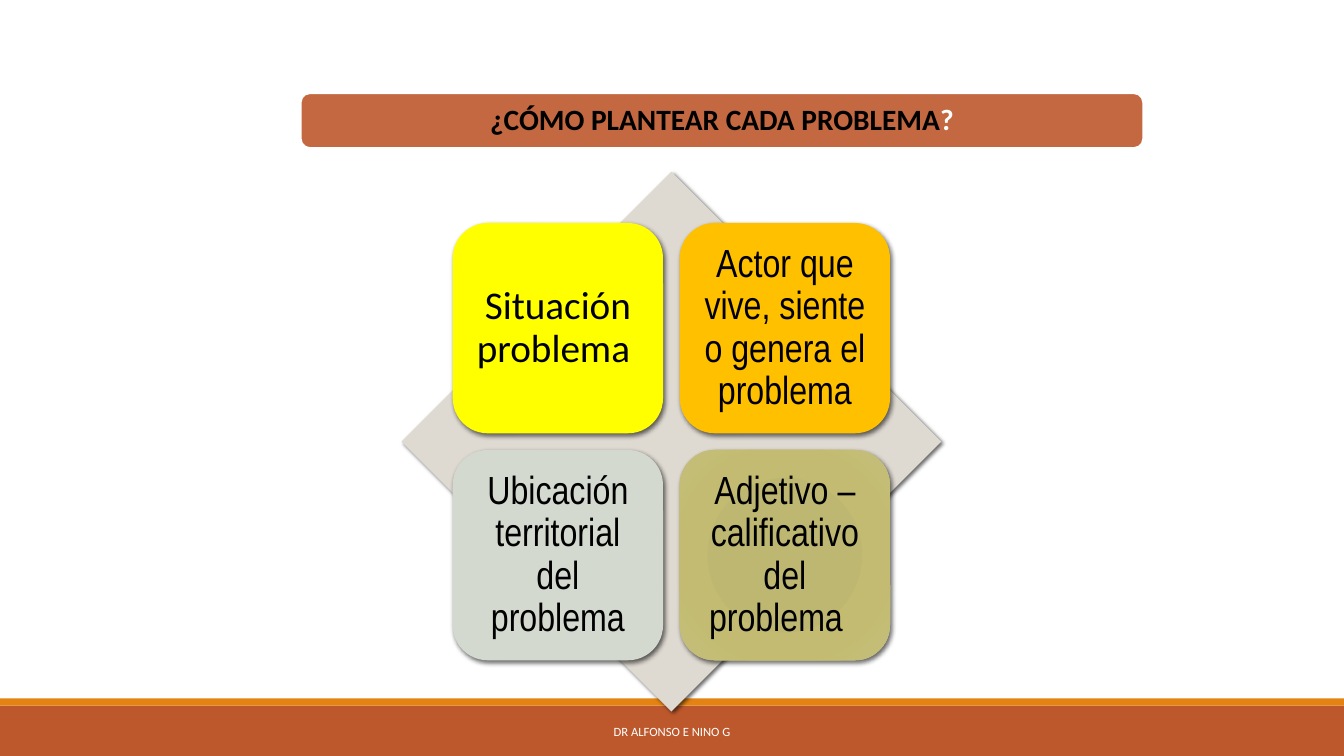
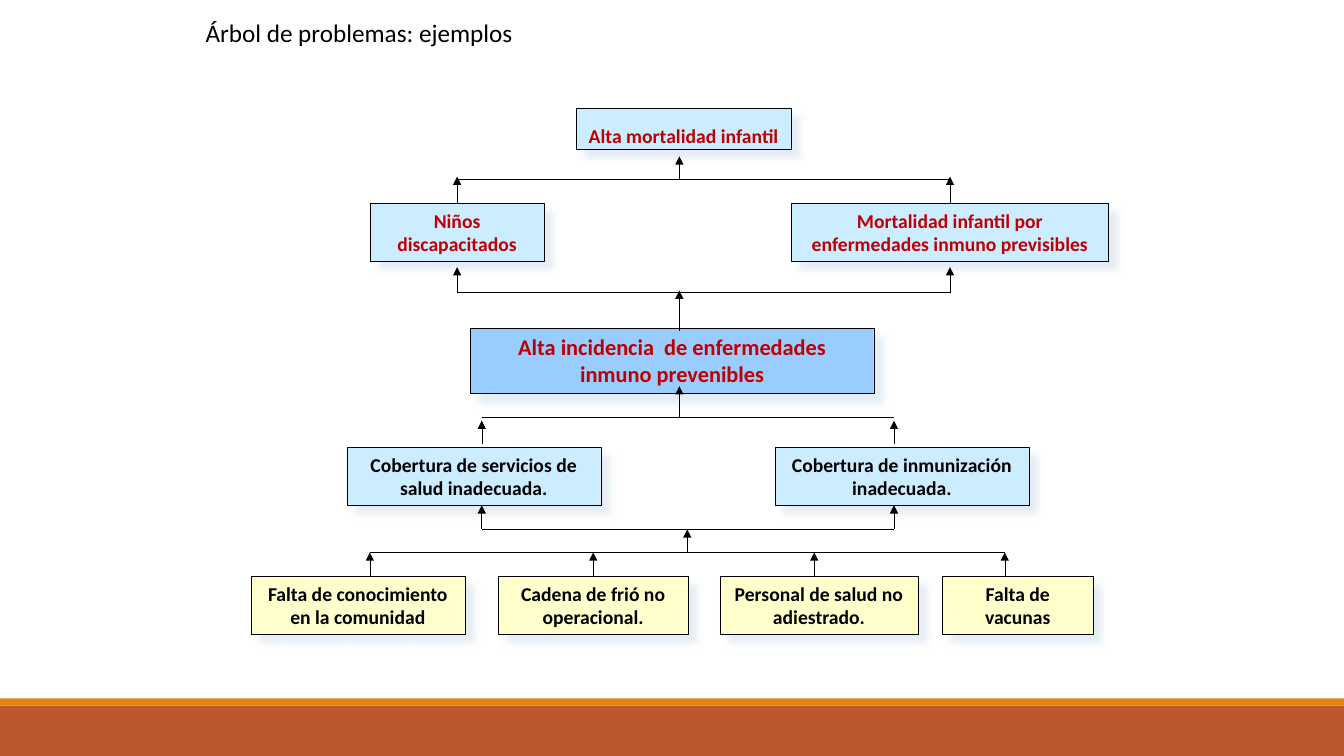
from dataclasses import dataclass
from typing import Optional

from pptx import Presentation
from pptx import oxml, util as u
from pptx.dml.color import RGBColor
from pptx.enum import shapes, text
from pptx.oxml import ns

# Shared look
WIDTH, HEIGHT = 33.87, 19.05
BLACK, WHITE, RED = "000000", "FFFFFF", "C00000"
RUST, ORANGE = "BD582C", "E48312"
PALE_BLUE, MID_BLUE, CREAM = "CCECFF", "99CCFF", "FFFFCC"
BODY_FONT, NARROW_FONT = "Calibri", "Arial Narrow"
RECTANGLE = shapes.MSO_SHAPE.RECTANGLE
ROUNDED = shapes.MSO_SHAPE.ROUNDED_RECTANGLE
MIDDLE, TOP = text.MSO_ANCHOR.MIDDLE, text.MSO_ANCHOR.TOP


@dataclass(frozen=True)
class Shadow:
    color: str
    opacity: int
    blur: float
    distance: float


@dataclass(frozen=True)
class Tile:
    words: str
    fill: Optional[str]
    font: str = NARROW_FONT


@dataclass(frozen=True)
class Box:
    words: str
    left: float
    top: float
    width: float
    height: float = 1.45
    fill: str = PALE_BLUE
    color: str = BLACK
    size: int = 14
    spacing: float = 1.0


@dataclass(frozen=True)
class Rail:
    left: float
    right: float
    y: float


@dataclass(frozen=True)
class ArrowRow:
    columns: tuple
    start: float
    end: float
    weight: float = 0.25


DIAMOND_SHADOW = Shadow(BLACK, 60, 3, 2)
TILE_SHADOW = Shadow(BLACK, 60, 3.5, 2)
BOX_SHADOW = Shadow("CCDDEA", 50, 5, 8.5)


# Drawing helpers
def rgb(color: str) -> RGBColor:
    return RGBColor.from_string(color)


def drawing_xml(markup: str):
    """Parse one DrawingML element given without its namespace."""
    name, rest = markup[1:].split(" ", 1)
    return oxml.parse_xml(f"<{name} {ns.nsdecls('a')} {rest}")


def add_shadow(shape, shadow: Shadow) -> None:
    effects = shape._element.spPr.find(ns.qn("a:effectLst"))
    effects.append(drawing_xml(
        f'<a:outerShdw blurRad="{u.Pt(shadow.blur)}" dist="{u.Pt(shadow.distance)}" '
        f'dir="2700000" algn="ctr" rotWithShape="0"><a:srgbClr val="{shadow.color}">'
        f'<a:alpha val="{shadow.opacity * 1000}"/></a:srgbClr></a:outerShdw>'))


def add_shape(slide, kind, left: float, top: float, width: float, height: float, *,
              fill: Optional[str] = None, line: Optional[str] = None, weight: float = 0.25,
              shadow: Optional[Shadow] = None):
    shape = slide.shapes.add_shape(kind, u.Cm(left), u.Cm(top), u.Cm(width), u.Cm(height))
    shape.shadow.inherit = False
    if fill:
        shape.fill.solid()
        shape.fill.fore_color.rgb = rgb(fill)
    if line:
        shape.line.color.rgb = rgb(line)
        shape.line.width = u.Pt(weight)
    else:
        shape.line.fill.background()
    if shadow:
        add_shadow(shape, shadow)
    return shape


def write(shape, words: str, *, size: float, color: str = BLACK, font: str = BODY_FONT,
          bold: bool = False, align=text.PP_ALIGN.CENTER, anchor=MIDDLE, spacing: float = 1.0,
          inset: Optional[float] = None, wrap: bool = True, ending: str = "") -> None:
    """Fill a shape with one paragraph; an ending follows in white."""
    frame = shape.text_frame
    frame.word_wrap = wrap
    frame.vertical_anchor = anchor
    if inset is not None:
        frame.margin_left = frame.margin_right = u.Cm(inset)
        frame.margin_top = frame.margin_bottom = u.Cm(inset)
    paragraph = frame.paragraphs[0]
    paragraph.alignment = align
    paragraph.line_spacing = spacing
    for part, part_color in ((words, color), (ending, WHITE)):
        if part:
            run = paragraph.add_run()
            run.text = part
            run.font.name, run.font.size, run.font.bold = font, u.Pt(size), bold
            run.font.color.rgb = rgb(part_color)


def add_textbox(slide, left: float, top: float, width: float, height: float, words: str,
                **formats) -> None:
    textbox = slide.shapes.add_textbox(u.Cm(left), u.Cm(top), u.Cm(width), u.Cm(height))
    write(textbox, words, **formats)


def add_line(slide, start: tuple, end: tuple, *, weight: float = 0.75, arrow: bool = False):
    connector = slide.shapes.add_connector(
        shapes.MSO_CONNECTOR.STRAIGHT, *(u.Cm(value) for value in start + end))
    connector.line.color.rgb = rgb(BLACK)
    connector.line.width = u.Pt(weight)
    properties = connector._element.spPr
    if arrow:
        properties.find(ns.qn("a:ln")).append(drawing_xml('<a:tailEnd type="triangle"/>'))
    properties.append(drawing_xml("<a:effectLst />"))
    return connector


def new_slide(presentation):
    """Add a blank slide with the two bands at its foot."""
    slide = presentation.slides.add_slide(presentation.slide_layouts[6])
    add_shape(slide, RECTANGLE, 0, 17.78, WIDTH, 1.27, fill=RUST)
    add_shape(slide, RECTANGLE, 0, 17.6, WIDTH, 0.18, fill=ORANGE)
    return slide


# Slide 1: four parts of a problem statement
TILES = (
    Tile("Situación problema ", "FFFF00", BODY_FONT),
    Tile("Actor que vive, siente o genera el problema", "FFC000"),
    Tile("Ubicación territorial del problema", "D4D9CF"),
    Tile("Adjetivo – calificativo del problema  ", None),
)
OLIVE_STOPS = ((0, "BEB76E"), (34, "BEB771"), (70, "C3BB71"), (100, "C5BF7D"))


def fill_olive(shape) -> None:
    stops = "".join(f'<a:gs pos="{position * 1000}"><a:srgbClr val="{color}"/></a:gs>'
                    for position, color in OLIVE_STOPS)
    shape._element.spPr.find(ns.qn("a:prstGeom")).addnext(drawing_xml(
        f'<a:gradFill rotWithShape="1"><a:gsLst>{stops}</a:gsLst><a:path path="circle">'
        '<a:fillToRect l="100000" t="100000" r="100000" b="100000"/></a:path></a:gradFill>'))


def build_statement_slide(presentation) -> None:
    slide = new_slide(presentation)

    # Heading bar
    heading = add_shape(slide, ROUNDED, 7.58, 2.35, 21.23, 1.38,
                        fill=RUST, line=WHITE, weight=1.25)
    color = heading._element.spPr.find(ns.qn("a:solidFill"))[0]
    color.append(drawing_xml('<a:alpha val="90000"/>'))
    write(heading, "¿CÓMO PLANTEAR CADA PROBLEMA", ending="?", size=21, bold=True,
          spacing=0.9, inset=0.23)

    # Diamond with a two by two grid of tiles
    add_shape(slide, shapes.MSO_SHAPE.DIAMOND, 10.12, 4.33, 13.6, 13.6,
              fill="DED9D1", shadow=DIAMOND_SHADOW)
    side, pitch = 5.3, 5.72
    for index, tile in enumerate(TILES):
        row, column = divmod(index, 2)
        shape = add_shape(slide, ROUNDED, 11.41 + column * pitch, 5.62 + row * pitch,
                          side, side, fill=tile.fill, shadow=TILE_SHADOW)
        if tile.fill is None:
            fill_olive(shape)
        write(shape, tile.words, size=28, font=tile.font, spacing=0.9, inset=0.3)

    # Footer
    add_textbox(slide, 10.24, 17.93, 13.39, 1.02, "DR ALFONSO E NINO G", size=9, color=WHITE)


# Slide 2: problem tree
CAUSE_TOP, EFFECT_TOP, ROOT_TOP = 11.28, 5.13, 14.53
BOXES = (
    Box("Alta mortalidad infantil", 14.53, 2.72, 5.4, 1.04, color=RED, spacing=1.45),
    Box("Niños discapacitados", 9.32, EFFECT_TOP, 4.4, color=RED),
    Box("Mortalidad infantil por enfermedades inmuno previsibles", 19.94, EFFECT_TOP, 8,
        color=RED),
    Box("Alta incidencia  de enfermedades inmuno prevenibles", 11.86, 8.28, 10.16, 1.64,
        fill=MID_BLUE, color=RED, size=16),
    Box("Cobertura de servicios de salud inadecuada.", 8.74, CAUSE_TOP, 6.4),
    Box("Cobertura de inmunización inadecuada.", 19.53, CAUSE_TOP, 6.4),
    Box("Falta de conocimiento en la comunidad", 6.32, ROOT_TOP, 5.4, fill=CREAM),
    Box("Cadena de frió no operacional.", 12.55, ROOT_TOP, 4.8, fill=CREAM),
    Box("Personal de salud no adiestrado.", 18.14, ROOT_TOP, 5, fill=CREAM),
    Box("Falta de vacunas", 23.75, ROOT_TOP, 3.8, fill=CREAM),
)
EFFECTS, CAUSES, ROOTS = (11.52, 23.94), (12.14, 22.53), (9.32, 14.95, 20.52, 25.32)
TRUNK, LOWER_TRUNK = (17.12,), (17.32,)
RAILS = (
    Rail(*EFFECTS, 4.52),
    Rail(*EFFECTS, 7.37),
    Rail(*CAUSES, 10.52),
    Rail(*CAUSES, 13.34),
    Rail(ROOTS[0], ROOTS[-1], 13.92),
)
ARROW_ROWS = (
    ArrowRow(TRUNK, 4.52, 3.94),
    ArrowRow(EFFECTS, EFFECT_TOP, 4.45),
    ArrowRow(EFFECTS, 7.39, 6.73),
    ArrowRow(TRUNK, 8.33, 7.32),
    ArrowRow(TRUNK, 10.52, 9.73),
    ArrowRow(CAUSES, 11.2, 10.6),
    ArrowRow(CAUSES, 13.34, 12.73, 0.75),
    ArrowRow(LOWER_TRUNK, 13.92, 13.34, 0.75),
    ArrowRow(ROOTS, ROOT_TOP, 13.92),
)


def build_tree_slide(presentation) -> None:
    slide = new_slide(presentation)
    add_textbox(slide, 4.93, 0.3, 8.36, 1.02, "Árbol de problemas: ejemplos", size=18,
                align=text.PP_ALIGN.LEFT, anchor=TOP, wrap=False)

    # Boxes, kept by the middle of their top side
    top_middles = {}
    for box in BOXES:
        shape = add_shape(slide, RECTANGLE, box.left, box.top, box.width, box.height,
                          fill=box.fill, line=BLACK, shadow=BOX_SHADOW)
        write(shape, box.words, size=box.size, color=box.color, bold=True, anchor=TOP,
              spacing=box.spacing)
        top_middles[round(box.left + box.width / 2, 2), box.top] = shape

    # Rails and arrows
    for rail in RAILS:
        add_line(slide, (rail.left, rail.y), (rail.right, rail.y))
    for row in ARROW_ROWS:
        for x in row.columns:
            connector = add_line(slide, (x, row.start), (x, row.end),
                                 weight=row.weight, arrow=True)
            source = top_middles.get((x, row.start))
            if source is not None:
                connector.begin_connect(source, 0)


def main() -> None:
    presentation = Presentation()
    presentation.slide_width, presentation.slide_height = u.Cm(WIDTH), u.Cm(HEIGHT)
    build_statement_slide(presentation)
    build_tree_slide(presentation)
    presentation.save("out.pptx")


if __name__ == "__main__":
    main()
